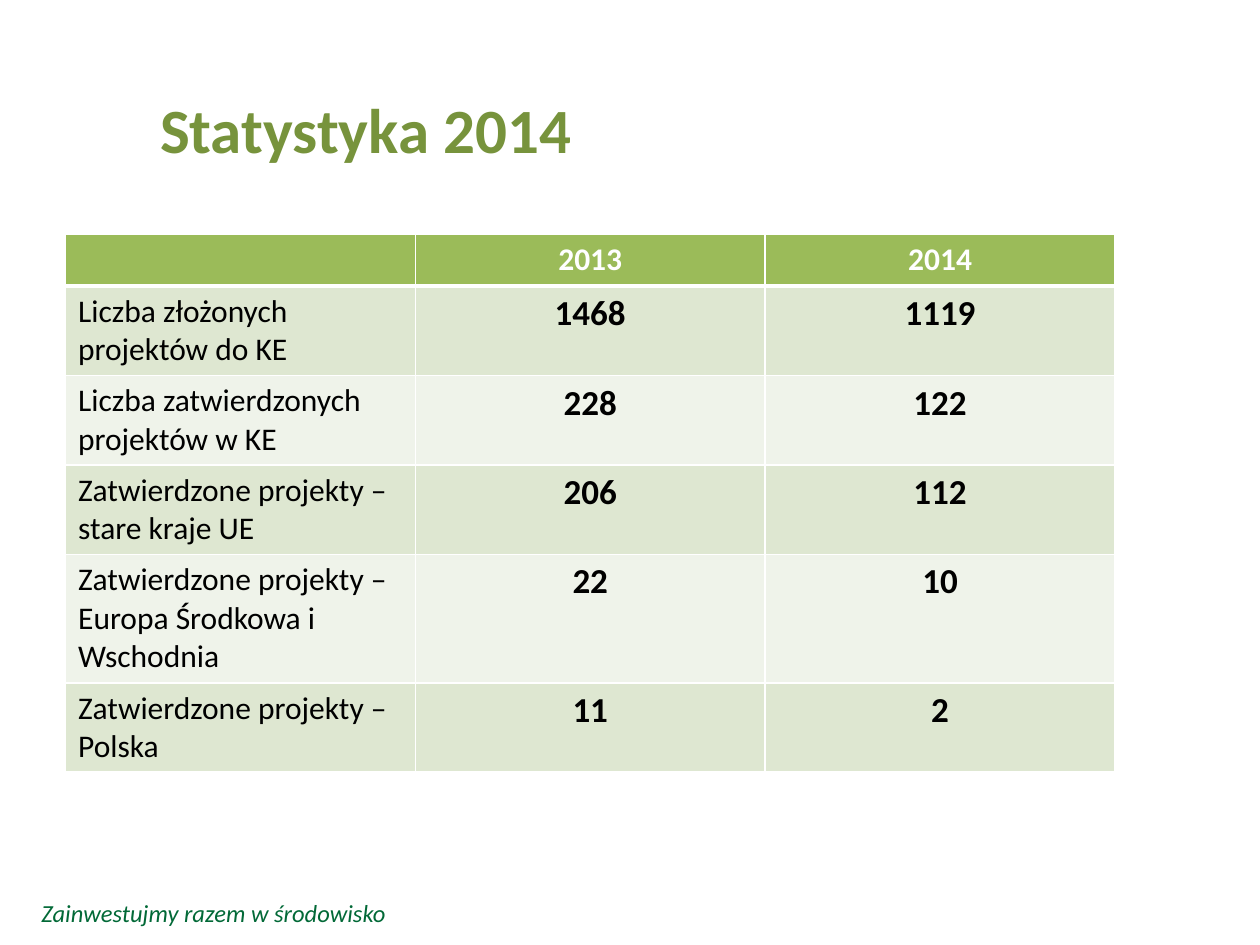
from dataclasses import dataclass

from lxml.etree import SubElement
from pptx import Presentation
from pptx.dml.color import RGBColor
from pptx.enum.text import MSO_ANCHOR, PP_ALIGN
from pptx.oxml.ns import qn
from pptx.util import Inches, Pt


@dataclass(frozen=True)
class Theme:
    font: str = "Calibri"
    title: str = "77933C"
    slogan: str = "026937"
    header: str = "9BBB59"
    bands: tuple = ("DEE7D1", "EFF3EA")
    white: str = "FFFFFF"
    black: str = "000000"
    title_size: int = 36
    number_size: int = 20
    label_size: int = 18
    slogan_size: int = 14


THEME = Theme()


def style_text(paragraph, size, color, bold=False, italic=False, align=PP_ALIGN.LEFT):
    paragraph.alignment = align
    font = paragraph.font
    font.name, font.size = THEME.font, Pt(size)
    font.bold, font.italic = bold, italic
    font.color.rgb = RGBColor.from_string(color)
    for run in paragraph.runs:
        run.font.name, run.font.size = THEME.font, Pt(size)
        run.font.bold, run.font.italic = bold, italic
        run.font.color.rgb = RGBColor.from_string(color)


def add_borders(cell, widths):
    properties = cell._tc.get_or_add_tcPr()
    for side, width in widths.items():
        line = SubElement(properties, qn(f"a:ln{side}"), w=str(Pt(width)))
        SubElement(SubElement(line, qn("a:solidFill")), qn("a:srgbClr"), val=THEME.white)


prs = Presentation()
prs.slide_width, prs.slide_height = Inches(10), Inches(7.5)
slide = prs.slides.add_slide(prs.slide_layouts[5])

# Slogan at the bottom
slogan = slide.shapes.add_textbox(Inches(0.23), Inches(7.08), Inches(4.22), Inches(0.34))
slogan.text_frame.word_wrap = True
slogan.text_frame.text = "Zainwestujmy razem w środowisko"
style_text(slogan.text_frame.paragraphs[0], THEME.slogan_size, THEME.slogan, italic=True)

# Title
title = slide.shapes.title
title.left, title.top = Inches(1.17), Inches(0.39)
title.width, title.height = Inches(8.33), Inches(1.25)
title.text_frame.text = "Statystyka 2014"
title.text_frame.vertical_anchor = MSO_ANCHOR.MIDDLE
style_text(title.text_frame.paragraphs[0], THEME.title_size, THEME.title, bold=True)

# Project statistics
statistics = [
    ("", "2013", "2014"),
    ("Liczba złożonych projektów do KE", "1468", "1119"),
    ("Liczba zatwierdzonych projektów w KE", "228", "122"),
    ("Zatwierdzone projekty – stare kraje UE", "206", "112"),
    ("Zatwierdzone projekty – Europa Środkowa i Wschodnia", "22", "10"),
    ("Zatwierdzone projekty – Polska", "11", "2"),
]
row_heights = [0.41, 0.71, 0.71, 0.71, 1.02, 0.71]
table = slide.shapes.add_table(
    len(statistics), 3, Inches(0.52), Inches(1.86), Inches(8.33), Inches(sum(row_heights))
).table
for column in table.columns:
    column.width = Inches(8.33 / 3)

for r, values in enumerate(statistics):
    table.rows[r].height = Inches(row_heights[r])
    is_header = r == 0
    for c, value in enumerate(values):
        cell = table.cell(r, c)
        is_number = c > 0
        add_borders(cell, {"L": 1, "R": 1, "T": 3 if r == 1 else 1, "B": 3 if is_header else 1})
        cell.fill.solid()
        fill = THEME.header if is_header else THEME.bands[(r - 1) % 2]
        cell.fill.fore_color.rgb = RGBColor.from_string(fill)
        cell.text_frame.text = value
        style_text(
            cell.text_frame.paragraphs[0],
            THEME.number_size if is_number and not is_header else THEME.label_size,
            THEME.white if is_header else THEME.black,
            bold=is_header or is_number,
            align=PP_ALIGN.CENTER if is_number else PP_ALIGN.LEFT,
        )

prs.save("out.pptx")
